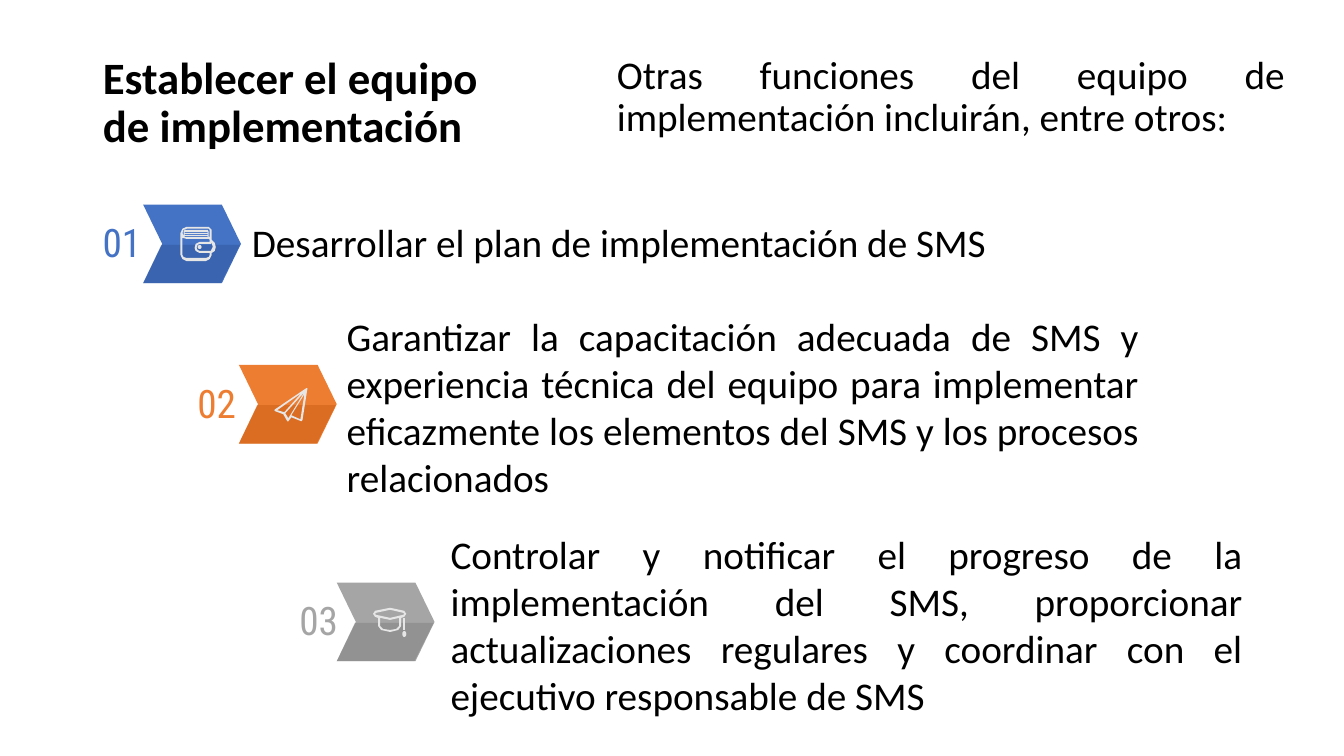
from lxml.etree import SubElement
from pptx import Presentation
from pptx.dml.color import RGBColor
from pptx.enum.shapes import MSO_SHAPE as Kind
from pptx.enum.text import MSO_ANCHOR as Anchor, MSO_AUTO_SIZE as Fit, PP_ALIGN as Align
from pptx.oxml.ns import qn
from pptx.util import Inches, Pt

# Content
TITLE = "Establecer el equipo de implementación"
INTRO = "Otras funciones del equipo de implementación incluirán, entre otros:"
HUES = {
    "ink": "000000", "icon": "E7E6E6",
    "blue": "4472C4", "navy": "2F5597",
    "orange": "ED7D31", "rust": "C55A11",
    "gray": "A5A5A5", "slate": "7C7C7C",
}

# Grid: 1333 columns by 750 rows, one cell is a hundredth of an inch
CELL = Inches(0.01)
COLS, ROWS = 1333, 750
ARROW_W, ARROW_H, NOTCH = 97, 78, 0.243
NUM_W, TEXT_W, LINE_H = 94, 805, 57
SHADE = [[(18, 40), (96, 40), (77, 78), (0, 78)]]


def box(x, y, w, h):
    return [(x, y), (x + w, y), (x + w, y + h), (x, y + h)]


# Icons: place in the arrow, outlines (first one outer, the rest holes), dot
WALLET = {
    "at": (37, 22), "dot": (17, 18, 4, 4),
    "parts": [[
        [(6, 0), (28, 0), (31, 3), (31, 13), (34, 16), (35, 20), (34, 24), (31, 26),
         (31, 28), (29, 32), (25, 34), (6, 34), (2, 32), (0, 28), (0, 6), (2, 2)],
        [(6, 2), (28, 2), (29, 3), (29, 10), (28, 10), (28, 5), (27, 3),
         (4, 3), (3, 5), (3, 9), (2, 6), (3, 3)],
        *[box(4, y, 23, 1) for y in (5, 7, 9)],
        [(2, 11), (6, 12), (28, 12), (29, 13), (29, 15), (19, 15), (15, 17), (14, 21),
         (15, 24), (19, 26), (29, 26), (29, 28), (28, 30), (25, 31), (6, 31), (3, 30), (2, 28)],
        [(19, 17), (30, 17), (31, 16), (32, 20), (30, 24), (19, 24), (17, 23), (16, 21), (17, 18)],
    ]],
}
PLANE = {
    "at": (35, 23), "dot": None,
    "parts": [[
        [(33, 0), (32, 0), (1, 21), (0, 22), (1, 23), (9, 26), (13, 33), (14, 33),
         (17, 29), (27, 33), (28, 32)],
        [(3, 22), (27, 5), (10, 24)],
        [(11, 25), (30, 4), (14, 30)],
        [(26, 31), (17, 27), (30, 6)],
    ]],
}
CAP = {
    "at": (36, 25), "dot": (29, 23, 4, 6),
    "parts": [[
        [(17, 0), (2, 3), (0, 6), (2, 9), (5, 10), (5, 18), (8, 22), (17, 24),
         (25, 22), (28, 18), (28, 10), (31, 9), (33, 6), (31, 3)],
        [(26, 18), (23, 21), (17, 22), (10, 21), (7, 18), (7, 10), (17, 12), (26, 10)],
        [(17, 10), (3, 7), (2, 6), (3, 5), (17, 2), (30, 5), (31, 6), (30, 7)],
    ], [box(30, 10, 2, 12)]],
}

# Steps: arrow place, right edge of number, text place and lines, colours, icon, text
STEPS = [
    ((142, 203), 150, (240, 212), 57, "blue", "navy", WALLET,
     "Desarrollar el plan de implementación de SMS"),
    ((237, 362), 244, (334, 305), 199, "orange", "rust", PLANE,
     "Garantizar la capacitación adecuada de SMS y experiencia técnica del equipo "
     "para implementar eficazmente los elementos del SMS y los procesos relacionados"),
    ((334, 578), 345, (437, 521), 199, "gray", "slate", CAP,
     "Controlar y notificar el progreso de la implementación del SMS, proporcionar "
     "actualizaciones regulares y coordinar con el ejecutivo responsable de SMS"),
]


def span(*cells):
    return [round(n * CELL) for n in cells]


def paint(shape, hue):
    shape.shadow.inherit = False
    shape.fill.solid()
    shape.fill.fore_color.rgb = RGBColor.from_string(HUES[hue])
    shape.line.fill.background()
    return shape


def draw(shapes, loops, x, y, hue):
    pen = shapes.build_freeform(*loops[0][0], scale=float(CELL))
    for i, loop in enumerate(loops):
        if i:
            pen.move_to(*loop[0])
        pen.add_line_segments(loop[1:], close=True)
    return paint(pen.convert_to_shape(*span(x, y)), hue)


def write(shape, text, size=28, hue="ink", align=Align.JUSTIFY,
          font="Calibri", bold=False, lead=1.0, fit=Fit.SHAPE_TO_FIT_TEXT):
    frame = shape.text_frame
    frame.word_wrap = True
    frame.auto_size = fit
    frame.vertical_anchor = Anchor.TOP
    para = frame.paragraphs[0]
    para.alignment, para.line_spacing = align, lead
    run = para.add_run()
    run.text = text
    run.font.name, run.font.size, run.font.bold = font, Pt(size), bold
    run.font.color.rgb = RGBColor.from_string(HUES[hue])


def main():
    deck = Presentation()
    deck.slide_width, deck.slide_height = span(COLS, ROWS)
    slide = deck.slides.add_slide(deck.slide_layouts[5])
    shapes = slide.shapes

    # Heading and intro
    head = shapes.title
    head.left, head.top, head.width, head.height = span(92, 50, 430, 175)
    write(head, TITLE, 32, align=Align.LEFT, bold=True, lead=0.9, fit=Fit.NONE)
    intro = shapes.add_textbox(*span(602, 50, 682, 138))
    write(intro, INTRO, lead=0.9, fit=Fit.NONE)

    for num, (spot, edge, place, high, hue, dark, icon, text) in enumerate(STEPS, 1):
        x, y = spot

        # Arrow with its darker lower half
        arrow = shapes.add_shape(Kind.CHEVRON, *span(x, y, ARROW_W, ARROW_H))
        arrow.adjustments[0] = NOTCH
        paint(arrow, hue)
        shade = draw(shapes, SHADE, x, y, dark)
        tint = shade.fill._xPr.find(qn("a:solidFill"))[0]
        SubElement(tint, qn("a:alpha"), val="45000")

        # Icon
        left, top = x + icon["at"][0], y + icon["at"][1]
        for loops in icon["parts"]:
            draw(shapes, loops, left, top, "icon")
        if icon["dot"]:
            dx, dy, w, h = icon["dot"]
            paint(shapes.add_shape(Kind.OVAL, *span(left + dx, top + dy, w, h)), "icon")

        # Number and text
        label = shapes.add_textbox(*span(edge - NUM_W, y + 9, NUM_W, LINE_H))
        write(label, f"{num:02}", hue=hue, align=Align.RIGHT, font="Roboto Condensed")
        write(shapes.add_textbox(*span(*place, TEXT_W, high)), text)

    deck.save("out.pptx")


if __name__ == "__main__":
    main()
